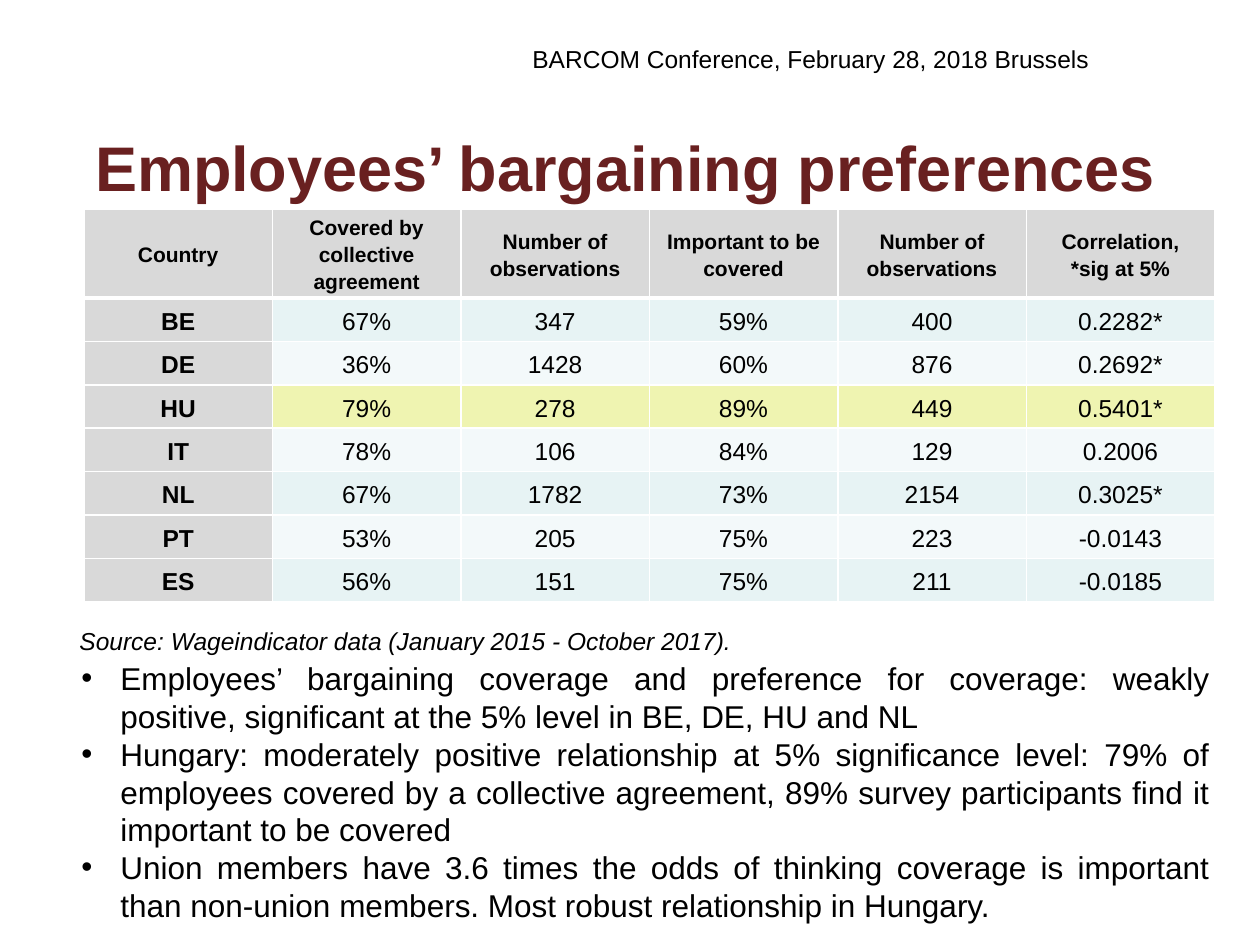
from lxml import etree
from pptx import Presentation
from pptx.dml.color import RGBColor
from pptx.enum.text import MSO_ANCHOR, PP_ALIGN
from pptx.oxml.ns import qn
from pptx.util import Pt

PX = 914400 / 126
LEFT, CENTER, JUSTIFY = PP_ALIGN.LEFT, PP_ALIGN.CENTER, PP_ALIGN.JUSTIFY
TOP, MIDDLE = MSO_ANCHOR.TOP, MSO_ANCHOR.MIDDLE
FONT = "Arial"
BLACK, WHITE, MAROON = "000000", "FFFFFF", "692020"
GREY, TEAL, PALE_TEAL, HIGHLIGHT = "D9D9D9", "E7F3F4", "F3F9FA", "EFF4B1"
HIGHLIGHTED_COUNTRY = "HU"

HEADINGS = [
    "Country",
    "Covered by collective agreement",
    "Number of observations",
    "Important to be covered",
    "Number of observations",
    "Correlation,\v*sig at 5%",
]
COUNTRIES = [
    ["BE", "67%", "347", "59%", "400", "0.2282*"],
    ["DE", "36%", "1428", "60%", "876", "0.2692*"],
    ["HU", "79%", "278", "89%", "449", "0.5401*"],
    ["IT", "78%", "106", "84%", "129", "0.2006"],
    ["NL", "67%", "1782", "73%", "2154", "0.3025*"],
    ["PT", "53%", "205", "75%", "223", "-0.0143"],
    ["ES", "56%", "151", "75%", "211", "-0.0185"],
]
FINDINGS = [
    "Employees’ bargaining coverage and preference for coverage: weakly "
    "positive, significant at the 5% level in BE, DE, HU and NL",
    "Hungary: moderately positive relationship at 5% significance level: "
    "79% of employees covered by a collective agreement, 89% survey "
    "participants find it important to be covered",
    "Union members have 3.6 times the odds of thinking coverage is important "
    "than non-union members. Most robust relationship in Hungary.",
]


def px(length):
    """Turn px into EMU."""
    return round(length * PX)


def color(hex_code):
    """Turn a hex string into a colour."""
    return RGBColor.from_string(hex_code)


def style_paragraph(paragraph, size, align, ink=BLACK, bold=False, italic=False):
    """Align a paragraph and format its runs."""
    paragraph.alignment = align
    for run in paragraph.runs:
        font = run.font
        font.name, font.size = FONT, Pt(size)
        font.bold, font.italic = bold, italic
        font.color.rgb = color(ink)


def add_text(slide, box, lines, size, align=LEFT, anchor=TOP, **look):
    """Place a wrapped text box and return its paragraphs."""
    frame = slide.shapes.add_textbox(*map(px, box)).text_frame
    frame.word_wrap = True
    frame.vertical_anchor = anchor
    frame.text = "\n".join(lines)
    for paragraph in frame.paragraphs:
        style_paragraph(paragraph, size, align, **look)
    return frame.paragraphs


def add_findings(slide, box):
    """Place the justified, bulleted findings."""
    indent = px(39)
    for finding in add_text(slide, box, FINDINGS, 18, JUSTIFY):
        properties = finding._p.get_or_add_pPr()
        properties.set("marL", str(indent))
        properties.set("indent", str(-indent))
        etree.SubElement(properties, qn("a:buFont"), typeface=FONT)
        etree.SubElement(properties, qn("a:buChar"), char="•")


def add_borders(cell, top_width, bottom_width):
    """Draw white borders around a cell."""
    properties = cell._tc.get_or_add_tcPr()
    widths = {"lnL": 1, "lnR": 1, "lnT": top_width, "lnB": bottom_width}
    for side, width in widths.items():
        border = etree.SubElement(properties, qn(f"a:{side}"), w=str(Pt(width)))
        fill = etree.SubElement(border, qn("a:solidFill"))
        etree.SubElement(fill, qn("a:srgbClr"), val=WHITE)


def cell_fill(row, column, country):
    """Choose the fill of a cell from its place in the table."""
    if row == 0 or column == 0:
        return GREY
    if country == HIGHLIGHTED_COUNTRY:
        return HIGHLIGHT
    return TEAL if row % 2 else PALE_TEAL


def add_country_table(slide, box):
    """Place the table of coverage and preferences by country."""
    rows = [HEADINGS] + COUNTRIES
    width, height = box[2:]
    heading_height = 89
    country_height = (height - heading_height) / len(COUNTRIES)
    table = slide.shapes.add_table(len(rows), len(HEADINGS), *map(px, box)).table
    table.horz_banding = False
    for column in table.columns:
        column.width = px(width / len(HEADINGS))
    for r, values in enumerate(rows):
        table.rows[r].height = px(country_height if r else heading_height)
        for c, value in enumerate(values):
            cell = table.cell(r, c)
            cell.margin_left = cell.margin_right = px(9)
            cell.margin_top = cell.margin_bottom = 0
            cell.vertical_anchor = MIDDLE
            add_borders(cell, 3 if r == 1 else 1, 3 if r == 0 else 1)
            cell.fill.solid()
            cell.fill.fore_color.rgb = color(cell_fill(r, c, values[0]))
            cell.text_frame.text = value
            paragraph = cell.text_frame.paragraphs[0]
            paragraph.line_spacing = 1.15
            style_paragraph(paragraph, 14 if r else 12, CENTER, bold=r == 0 or c == 0)


def main():
    """Build the slide and save it."""
    deck = Presentation()
    deck.slide_width, deck.slide_height = px(1260), px(945)
    slide = deck.slides.add_slide(deck.slide_layouts[6])
    add_text(slide, (520, 38, 616, 43),
             ["BARCOM Conference, February 28, 2018 Brussels"], 14)
    add_text(slide, (67, 620, 1153, 42),
             ["Source: Wageindicator data (January 2015 - October 2017)."],
             14, italic=True)
    add_text(slide, (35, 107, 1181, 118), ["Employees’ bargaining preferences"],
             36, CENTER, MIDDLE, ink=MAROON, bold=True)
    add_findings(slide, (69, 653, 1153, 280))
    add_country_table(slide, (84, 209, 1131, 393))
    deck.save("out.pptx")


if __name__ == "__main__":
    main()
